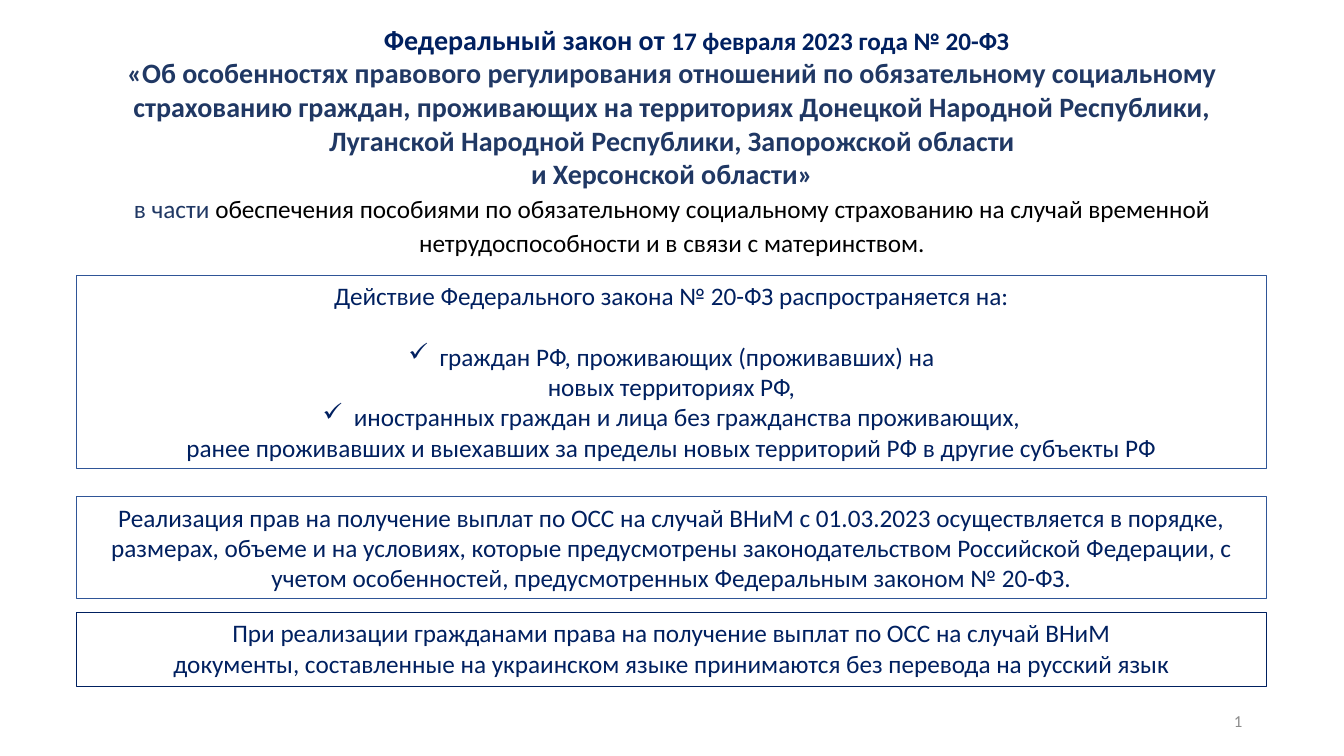
import dataclasses

import pptx
import pptx.dml.color
import pptx.enum.shapes
import pptx.enum.text
import pptx.oxml.ns
import pptx.util
from lxml import etree

Inches = pptx.util.Inches
Pt = pptx.util.Pt
Align = pptx.enum.text.PP_ALIGN
Anchor = pptx.enum.text.MSO_ANCHOR


@dataclasses.dataclass(frozen=True)
class Theme:
    font: str = "Calibri"
    navy: str = "002060"
    title_blue: str = "203864"
    border_blue: str = "2F5597"
    black: str = "000000"
    gray: str = "8C8C8C"
    heading: int = 20
    body: int = 18
    small: int = 12
    heading_line: int = 24
    border: float = 0.75


THEME = Theme()


def rgb(color):
    return pptx.dml.color.RGBColor.from_string(color)


def add_run(paragraph, text, size=THEME.body, color=THEME.navy, bold=False):
    run = paragraph.add_run()
    run.text = text
    run.font.name = THEME.font
    run.font.size = Pt(size)
    run.font.bold = bold
    run.font.color.rgb = rgb(color)


def set_indent(paragraph, left=0, first=0):
    properties = paragraph._p.get_or_add_pPr()
    properties.set("marL", str(Inches(left)))
    properties.set("indent", str(Inches(first)))
    return properties


def add_bullet(paragraph, mark="✓"):
    properties = set_indent(paragraph, left=0.31, first=-0.31)
    bullet = etree.SubElement(properties, pptx.oxml.ns.qn("a:buChar"))
    bullet.set("char", mark)


def next_paragraph(frame, index, alignment=Align.CENTER):
    paragraph = frame.paragraphs[0] if index == 0 else frame.add_paragraph()
    paragraph.alignment = alignment
    return paragraph


def prepare_frame(shape, anchor=Anchor.TOP):
    frame = shape.text_frame
    frame.word_wrap = True
    frame.auto_size = pptx.enum.text.MSO_AUTO_SIZE.NONE
    frame.vertical_anchor = anchor
    return frame


def place_title(slide, left, top, width, height):
    title = slide.shapes.title
    title.left, title.top = Inches(left), Inches(top)
    title.width, title.height = Inches(width), Inches(height)
    frame = prepare_frame(title)
    law = dict(color=THEME.title_blue, size=THEME.heading, bold=True)
    lines = [
        [("Федеральный закон от ", dict(size=THEME.heading, bold=True)),
         ("17 февраля 2023 года № 20-ФЗ", dict(bold=True))],
        [("«Об особенностях правового регулирования отношений по обязательному социальному "
          "страхованию граждан, проживающих на территориях Донецкой Народной Республики, "
          "Луганской Народной Республики, Запорожской области", law)],
        [("и Херсонской области»", law)],
        [("в части ", dict(color=THEME.title_blue)),
         ("обеспечения пособиями по обязательному социальному страхованию на случай "
          "временной нетрудоспособности и в связи с материнством.", dict(color=THEME.black))],
    ]
    for index, runs in enumerate(lines):
        paragraph = next_paragraph(frame, index)
        paragraph.line_spacing = Pt(THEME.heading_line)
        for text, style in runs:
            add_run(paragraph, text, **style)
    set_indent(frame.paragraphs[0], first=0.49)


def add_panel(slide, left, top, width, height, lines, border=THEME.border_blue):
    """Add an outlined box with centred lines and return its paragraphs."""
    panel = slide.shapes.add_shape(
        pptx.enum.shapes.MSO_SHAPE.RECTANGLE,
        Inches(left), Inches(top), Inches(width), Inches(height))
    panel.shadow.inherit = False
    panel.fill.background()
    panel.line.color.rgb = rgb(border)
    panel.line.width = Pt(THEME.border)
    frame = prepare_frame(panel)
    for index, text in enumerate(lines):
        add_run(next_paragraph(frame, index), text)
    return frame.paragraphs


def add_scope_panel(slide, left, top, width, height):
    paragraphs = add_panel(slide, left, top, width, height, [
        "Действие Федерального закона № 20-ФЗ распространяется на:",
        "граждан РФ, проживающих (проживавших) на",
        "новых территориях РФ,",
        "иностранных граждан и лица без гражданства проживающих,",
        "ранее проживавших и выехавших за пределы новых территорий РФ в другие субъекты РФ",
    ])
    paragraphs[0].space_after = Pt(22)
    for index in (1, 3):
        add_bullet(paragraphs[index])


def add_page_number(slide, left, top, width, height, number):
    box = slide.shapes.add_textbox(Inches(left), Inches(top), Inches(width), Inches(height))
    frame = prepare_frame(box, Anchor.MIDDLE)
    add_run(next_paragraph(frame, 0, Align.RIGHT), number, size=THEME.small, color=THEME.gray)


def main():
    presentation = pptx.Presentation()
    presentation.slide_width = Inches(13.33)
    presentation.slide_height = Inches(7.5)
    slide = presentation.slides.add_slide(presentation.slide_layouts[5])
    left, width = 0.76, 11.8

    place_title(slide, 0.62, 0.17, 12.09, 2.46)
    add_page_number(slide, 9.42, 6.95, 3, 0.4, "1")
    add_scope_panel(slide, left, 2.73, width, 1.92)
    add_panel(slide, left, 4.93, width, 1.01, [
        "Реализация прав на получение выплат по ОСС на случай ВНиМ с 01.03.2023 "
        "осуществляется в порядке, размерах, объеме и на условиях, которые предусмотрены "
        "законодательством Российской Федерации, с учетом особенностей, предусмотренных "
        "Федеральным законом № 20-ФЗ.",
    ])
    add_panel(slide, left, 6.08, width, 0.73, [
        "При реализации гражданами права на получение выплат по ОСС на случай ВНиМ",
        "документы, составленные на украинском языке принимаются без перевода на русский язык",
    ], border=THEME.navy)
    presentation.save("out.pptx")


if __name__ == "__main__":
    main()
